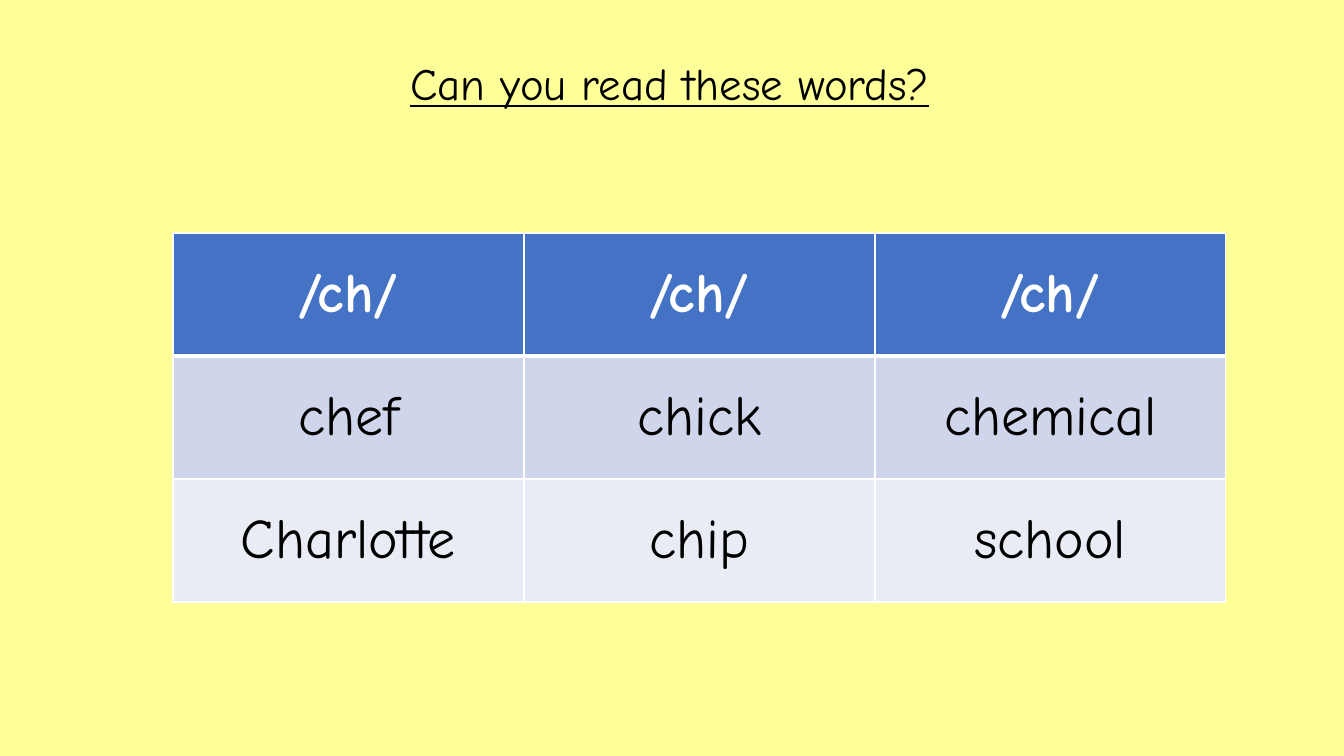
from dataclasses import dataclass

from lxml import etree
from pptx import Presentation
from pptx.dml.color import RGBColor
from pptx.enum.text import MSO_ANCHOR, PP_ALIGN
from pptx.oxml.ns import qn
from pptx.util import Emu, Pt

CENTER = PP_ALIGN.CENTER
MIDDLE = MSO_ANCHOR.MIDDLE
EMU_PER_PX = 12192000 / 1344
EMU_PER_PT = 12700


@dataclass(frozen=True)
class Theme:
    font: str = "Comic Neue"
    background: str = "FFFF99"
    ink: str = "000000"
    white: str = "FFFFFF"
    header: str = "4472C4"
    bands: tuple = ("CFD5EA", "E9EBF5")
    title_size: int = 32
    word_size: int = 40


THEME = Theme()
WORDS = [
    ["/ch/", "/ch/", "/ch/"],
    ["chef", "chick", "chemical"],
    ["Charlotte", "chip", "school"],
]


def px(n):
    return Emu(round(n * EMU_PER_PX))


def fill_solid(fill, color):
    fill.solid()
    fill.fore_color.rgb = RGBColor.from_string(color)


def write_text(tf, text, size, color, **formats):
    p = tf.paragraphs[0]
    p.alignment = CENTER
    r = p.add_run()
    r.text = text
    r.font.color.rgb = RGBColor.from_string(color)
    for name, value in {"name": THEME.font, "size": Pt(size), **formats}.items():
        setattr(r.font, name, value)


def add_title(s, text, left, top, width, height):
    tf = s.shapes.add_textbox(px(left), px(top), px(width), px(height)).text_frame
    tf.word_wrap = True
    write_text(tf, text, THEME.title_size, THEME.ink, underline=True)


def set_borders(cell, widths):
    """Draw white cell borders; widths maps side to points."""
    tc_pr = cell._tc.get_or_add_tcPr()
    for i, (side, width) in enumerate(widths.items()):
        ln = etree.Element(qn(f"a:ln{side}"), w=str(width * EMU_PER_PT))
        solid = etree.SubElement(ln, qn("a:solidFill"))
        etree.SubElement(solid, qn("a:srgbClr"), val=THEME.white)
        tc_pr.insert(i, ln)


def add_word_table(s, rows, left, top, col_width, row_height):
    n_rows, n_cols = len(rows), len(rows[0])
    table = s.shapes.add_table(n_rows, n_cols, px(left), px(top),
                               px(col_width * n_cols), px(row_height * n_rows)).table
    for col in table.columns:
        col.width = px(col_width)
    for i, words in enumerate(rows):
        table.rows[i].height = px(row_height)
        is_header = i == 0
        fill = THEME.header if is_header else THEME.bands[(i - 1) % 2]
        color = THEME.white if is_header else THEME.ink
        # The rule below the header is shared with the first word row
        widths = {"L": 1, "R": 1, "T": 3 if i == 1 else 1, "B": 3 if is_header else 1}
        for j, word in enumerate(words):
            cell = table.cell(i, j)
            cell.vertical_anchor = MIDDLE
            set_borders(cell, widths)
            fill_solid(cell.fill, fill)
            write_text(cell.text_frame, word, THEME.word_size, color, bold=is_header)


def main():
    prs = Presentation()
    prs.slide_width, prs.slide_height = px(1344), px(756)
    s = prs.slides.add_slide(prs.slide_layouts[6])
    fill_solid(s.background.fill, THEME.background)

    # Heading
    add_title(s, "Can you read these words?", 10, 51, 1320, 65)

    # Words sorted by sound
    add_word_table(s, WORDS, left=173, top=233, col_width=351, row_height=123)

    prs.save("out.pptx")


if __name__ == "__main__":
    main()
